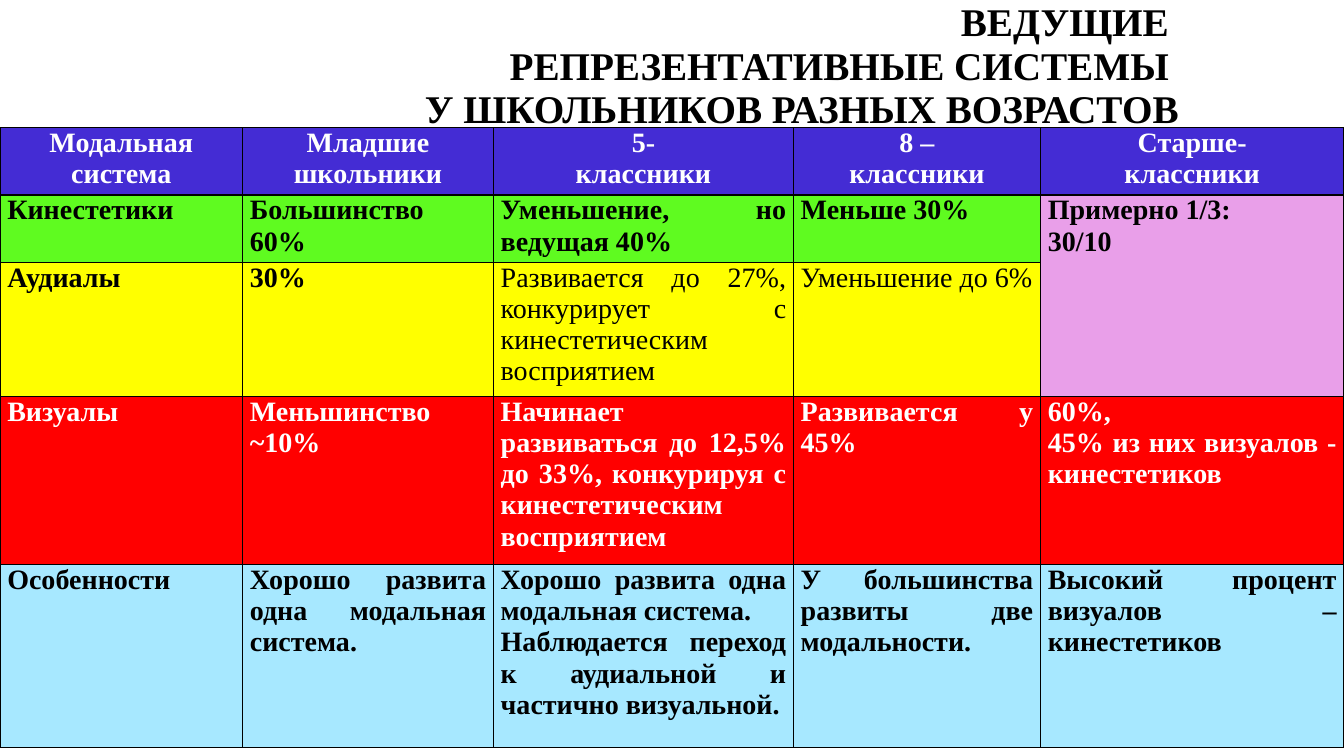
from dataclasses import dataclass

from lxml import etree
from pptx import Presentation
from pptx.dml.color import RGBColor
from pptx.enum.text import MSO_ANCHOR, PP_ALIGN
from pptx.oxml.ns import qn
from pptx.util import Pt

TOP = MSO_ANCHOR.TOP
CENTER, JUSTIFY, RIGHT = PP_ALIGN.CENTER, PP_ALIGN.JUSTIFY, PP_ALIGN.RIGHT


@dataclass(frozen=True)
class Theme:
    """Colours, font and type sizes of the slide."""
    font: str = "Times New Roman"
    title_size: float = 28
    cell_size: float = 20
    dark: str = "000000"
    light: str = "FFFFFF"
    header: str = "442CD4"
    kinesthetic: str = "5AFB19"
    auditory: str = "FFFF00"
    visual: str = "FF0000"
    features: str = "A7E8FF"
    seniors: str = "E99FE9"


THEME = Theme()
SLIDE_WIDTH, SLIDE_HEIGHT = 960, 540
TITLE = "ВЕДУЩИЕ \vРЕПРЕЗЕНТАТИВНЫЕ СИСТЕМЫ \vУ ШКОЛЬНИКОВ РАЗНЫХ ВОЗРАСТОВ"
COLUMN_WIDTHS = (173.3, 179.2, 214.3, 176.5, 216.7)
ROW_HEIGHTS = (47, 46.8, 93.4, 116.6, 130.5)
ROW_STYLES = (
    (THEME.header, THEME.light, CENTER),
    (THEME.kinesthetic, THEME.dark, JUSTIFY),
    (THEME.auditory, THEME.dark, JUSTIFY),
    (THEME.visual, THEME.light, JUSTIFY),
    (THEME.features, THEME.dark, JUSTIFY),
)
ROWS = (
    ("Модальная система", "Младшие школьники", "5-\nклассники", "8 –\nклассники",
     "Старше-\nклассники"),
    ("Кинестетики", "Большинство 60%", "Уменьшение, но ведущая 40%", "Меньше 30%",
     "Примерно 1/3:\n30/10"),
    ("Аудиалы", "30%", "Развивается до 27%, конкурирует с кинестетическим восприятием",
     "Уменьшение до 6%", ""),
    ("Визуалы", "Меньшинство\n~10%",
     "Начинает развиваться до 12,5% до 33%, конкурируя с кинестетическим восприятием",
     "Развивается у 45%", "60%,\n45% из них визуалов - кинестетиков"),
    ("Особенности", "Хорошо развита одна модальная система.",
     "Хорошо развита одна модальная система.\n"
     "Наблюдается переход к аудиальной и частично визуальной.",
     "У большинства развиты две модальности.", "Высокий процент визуалов – кинестетиков"),
)
SENIORS_CELL = (1, 4)
REGULAR_CELLS = {(2, 2), (2, 3)}
KINESTHETIC_OPACITY = 97


def write_text(text_frame, text, *, size, color, align, bold=True, line_spacing=None):
    """Fill a text frame with one formatted paragraph per line of text."""
    text_frame.word_wrap = True
    text_frame.text = text
    for paragraph in text_frame.paragraphs:
        paragraph.alignment = align
        paragraph.line_spacing = line_spacing
        for run in paragraph.runs:
            run.font.name = THEME.font
            run.font.size = Pt(size)
            run.font.bold = bold
            run.font.color.rgb = RGBColor.from_string(color)


def set_borders(cell, color, width):
    """Draw a solid line on all four sides of a cell."""
    properties = cell._tc.get_or_add_tcPr()
    for side in ("a:lnL", "a:lnR", "a:lnT", "a:lnB"):
        line = etree.SubElement(properties, qn(side), w=str(Pt(width)))
        fill = etree.SubElement(line, qn("a:solidFill"))
        etree.SubElement(fill, qn("a:srgbClr"), val=color)


def set_fill(cell, color, opacity=100):
    """Fill a cell with a colour at the given opacity in percent."""
    cell.fill.solid()
    cell.fill.fore_color.rgb = RGBColor.from_string(color)
    if opacity < 100:
        color_element = cell._tc.tcPr.find(f"{qn('a:solidFill')}/{qn('a:srgbClr')}")
        etree.SubElement(color_element, qn("a:alpha"), val=str(opacity * 1000))


def add_title(slide, left, top, width, height):
    """Place the right-aligned heading in the given box."""
    text_frame = slide.shapes.add_textbox(Pt(left), Pt(top), Pt(width), Pt(height)).text_frame
    text_frame.vertical_anchor = TOP
    text_frame.margin_top = text_frame.margin_bottom = 0
    write_text(text_frame, TITLE, size=THEME.title_size, color=THEME.dark, align=RIGHT,
               line_spacing=0.93)


def add_systems_table(slide, left, top):
    """Place the table of modal systems by age with its corner at left, top."""
    frame = slide.shapes.add_table(len(ROWS), len(COLUMN_WIDTHS), Pt(left), Pt(top),
                                   Pt(sum(COLUMN_WIDTHS)), Pt(sum(ROW_HEIGHTS)))
    table = frame.table
    for column, width in zip(table.columns, COLUMN_WIDTHS):
        column.width = Pt(width)
    for row, height in zip(table.rows, ROW_HEIGHTS):
        row.height = Pt(height)
    senior_row, senior_column = SENIORS_CELL
    table.cell(senior_row, senior_column).merge(table.cell(senior_row + 1, senior_column))
    for row_index, (texts, style) in enumerate(zip(ROWS, ROW_STYLES)):
        row_fill, text_color, align = style
        for column_index, text in enumerate(texts):
            cell = table.cell(row_index, column_index)
            position = (row_index, column_index)
            cell.margin_left = cell.margin_right = Pt(5.2)
            cell.margin_top = cell.margin_bottom = 0
            set_borders(cell, THEME.dark, 1)
            if position == SENIORS_CELL or cell.is_spanned:
                set_fill(cell, THEME.seniors)
            elif row_fill == THEME.kinesthetic:
                set_fill(cell, row_fill, KINESTHETIC_OPACITY)
            else:
                set_fill(cell, row_fill)
            if not cell.is_spanned:
                write_text(cell.text_frame, text, size=THEME.cell_size, color=text_color,
                           align=align, bold=position not in REGULAR_CELLS)


def main():
    """Build and save the presentation."""
    presentation = Presentation()
    presentation.slide_width, presentation.slide_height = Pt(SLIDE_WIDTH), Pt(SLIDE_HEIGHT)
    slide = presentation.slides.add_slide(presentation.slide_layouts[6])
    add_title(slide, 178.6, 1, 670.3, 90)
    add_systems_table(slide, 0, 91.2)
    presentation.save("out.pptx")


if __name__ == "__main__":
    main()
